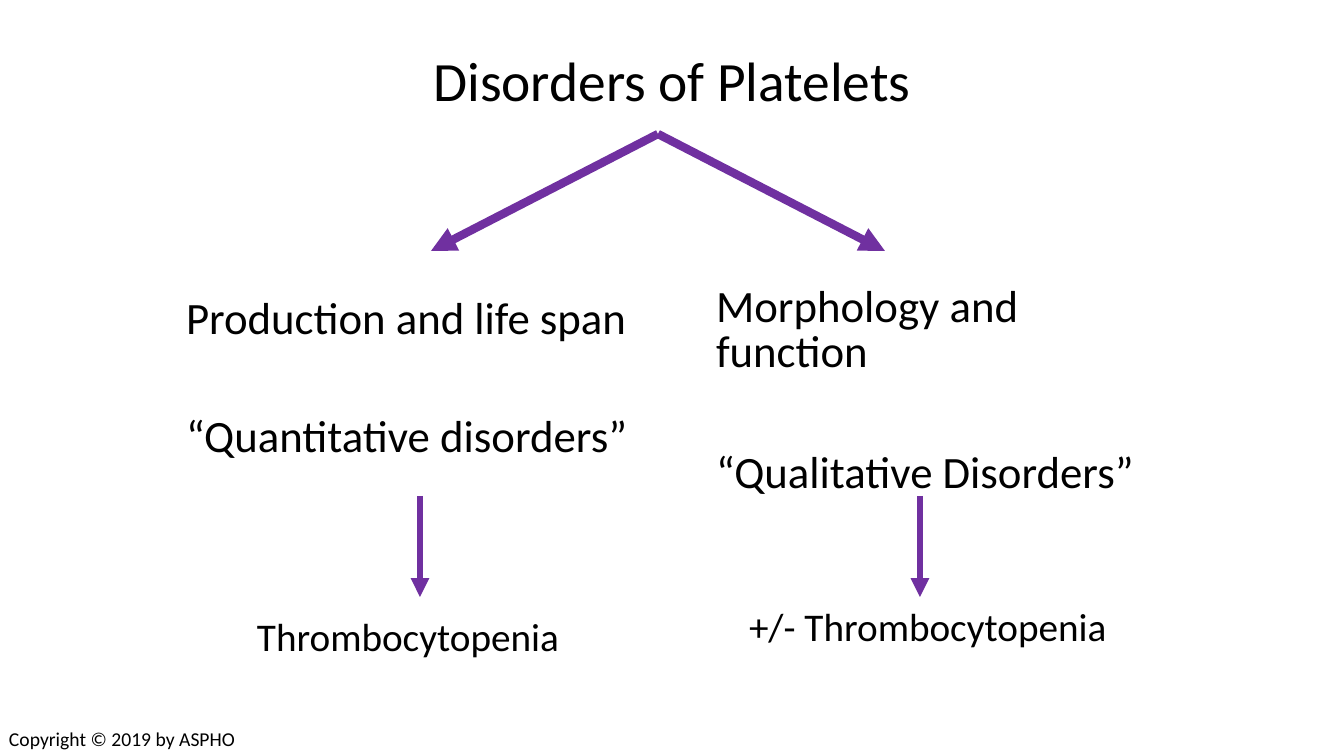
from lxml import etree
from pptx import Presentation
from pptx.dml.color import RGBColor
from pptx.enum.shapes import MSO_CONNECTOR
from pptx.enum.text import MSO_ANCHOR, MSO_AUTO_SIZE, PP_ALIGN
from pptx.oxml.ns import qn
from pptx.util import Emu, Pt

STRAIGHT = MSO_CONNECTOR.STRAIGHT
MIDDLE = MSO_ANCHOR.MIDDLE
TOP = MSO_ANCHOR.TOP
NO_AUTOFIT = MSO_AUTO_SIZE.NONE
LEFT = PP_ALIGN.LEFT
CENTER = PP_ALIGN.CENTER

EMU_PER_PX = 914400 / 100.8
FONT = "Calibri"
BLACK = "000000"
PURPLE = "7030A0"


def px(length):
    return Emu(round(length * EMU_PER_PX))


def color(hex_string):
    return RGBColor.from_string(hex_string)


def place(shape, left, top, width, height):
    shape.left, shape.top = px(left), px(top)
    shape.width, shape.height = px(width), px(height)


def write_text(shape, *texts, size, align=LEFT, anchor=TOP, line_spacing=1.0,
               gap=0, indent=0, margin_top=5):
    frame = shape.text_frame
    frame.word_wrap = True
    frame.auto_size = NO_AUTOFIT
    frame.vertical_anchor = anchor
    frame.margin_left = frame.margin_right = px(10)
    frame.margin_top, frame.margin_bottom = px(margin_top), px(5)
    for index, text in enumerate(texts):
        paragraph = frame.add_paragraph() if index else frame.paragraphs[0]
        paragraph.text = text
        properties = paragraph._p.get_or_add_pPr()
        properties.set("marL", str(px(indent)))
        properties.set("indent", "0")
        etree.SubElement(properties, qn("a:buNone"))
        paragraph.alignment = align
        paragraph.line_spacing = line_spacing
        paragraph.space_before = Pt(gap if index else 0)
        paragraph.space_after = Pt(0)
        for run in paragraph.runs:
            run.font.name = FONT
            run.font.size = Pt(size)
            run.font.color.rgb = color(BLACK)


def add_label(slide, box, *texts, **text_format):
    write_text(slide.shapes.add_textbox(*map(px, box)), *texts, **text_format)


def add_arrow(slide, start, end, width):
    arrow = slide.shapes.add_connector(STRAIGHT, *map(px, start + end))
    arrow.line.color.rgb = color(PURPLE)
    arrow.line.width = Pt(width)
    etree.SubElement(arrow.line._get_or_add_ln(), qn("a:tailEnd"), type="triangle")
    etree.SubElement(arrow._element.spPr, qn("a:effectLst"))


def main():
    presentation = Presentation()
    presentation.slide_width, presentation.slide_height = px(1344), px(756)
    slide = presentation.slides.add_slide(presentation.slide_layouts[1])

    title = slide.shapes.title
    place(title, 0, 50, 1344, 67)
    write_text(title, "Disorders of Platelets", size=39.6, align=CENTER,
               anchor=MIDDLE, line_spacing=0.9)

    qualitative = slide.placeholders[1]
    place(qualitative, 688, 277, 562, 273)
    write_text(qualitative, "Morphology and\vfunction", "“Qualitative Disorders”",
               size=32, line_spacing=Pt(32), gap=54, indent=18, margin_top=10)

    add_label(slide, (176, 285, 488, 197), "Production and life span",
              "“Quantitative disorders”", size=32, gap=46)
    add_label(slide, (247, 607, 341, 57), "Thrombocytopenia", size=28)
    add_label(slide, (739, 597, 386, 57), "+/- Thrombocytopenia", size=28)
    add_label(slide, (-1, 722, 250, 34), "Copyright © 2019 by ASPHO", size=14)

    fork_x = 658
    for side, column_x in ((-1, 420), (1, 920)):
        add_arrow(slide, (fork_x, 134), (fork_x + side * 227, 251), 6)
        add_arrow(slide, (column_x, 496), (column_x, 597), 4.5)

    presentation.save("out.pptx")


if __name__ == "__main__":
    main()
